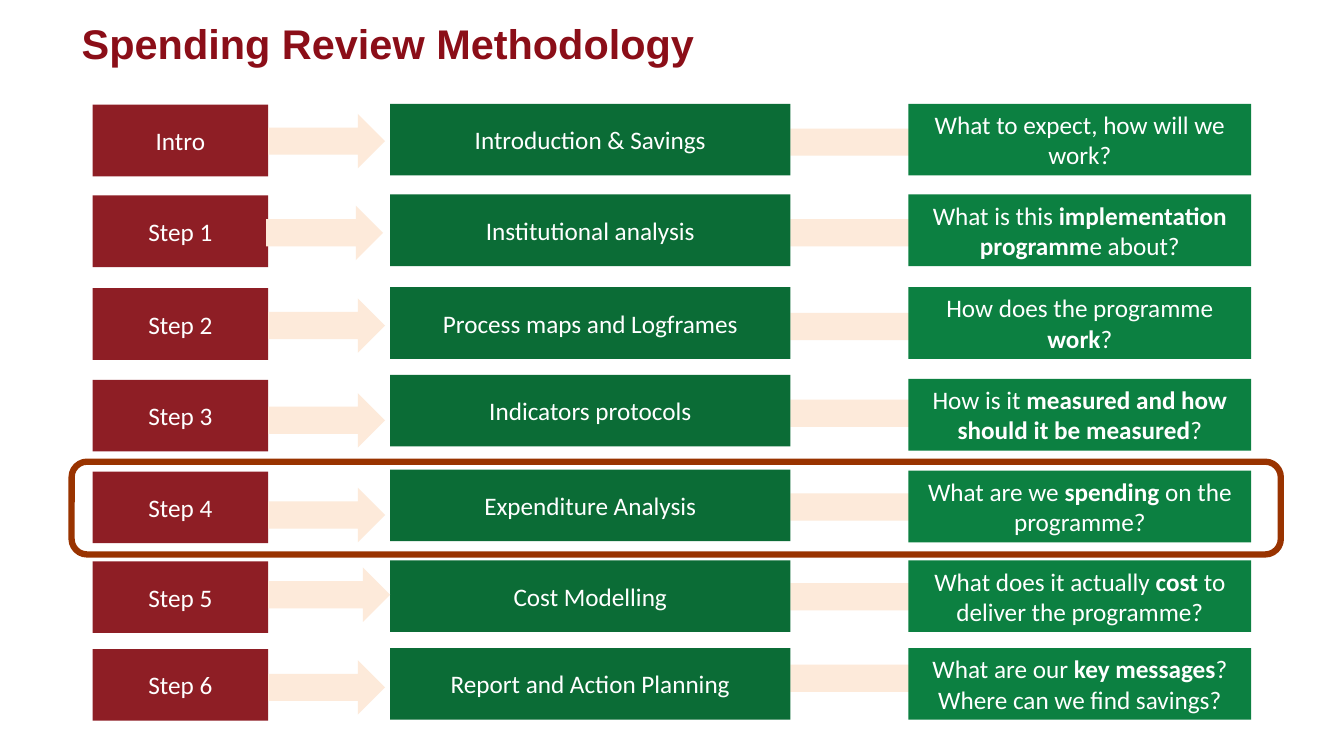
from dataclasses import dataclass

from pptx import Presentation
from pptx.dml.color import RGBColor
from pptx.enum.shapes import MSO_SHAPE as Shape
from pptx.enum.text import MSO_ANCHOR as Anchor, MSO_AUTO_SIZE as AutoSize, PP_ALIGN as Align
from pptx.util import Inches, Pt

SLIDE_WIDTH, SLIDE_HEIGHT = Inches(13.33), Inches(7.5)
COLUMN, ROW = SLIDE_WIDTH / 100, SLIDE_HEIGHT / 100


@dataclass(frozen=True)
class Theme:
    title: str = "8B0E18"
    step: str = "8E1E25"
    topic: str = "0B6C36"
    question: str = "0C8041"
    arrow: str = "FDEADA"
    highlight: str = "993300"
    text: str = "FFFFFF"
    title_font: str = "Arial"
    body_font: str = "Calibri"
    title_size: float = 29.6
    body_size: float = 18
    highlight_width: float = 4.5


@dataclass(frozen=True)
class Box:
    left: float
    top: float
    width: float
    height: float

    def inner(self, left, top, width, height):
        return Box(self.left + left, self.top + top, width, height)

    def lengths(self):
        return (round(self.left * COLUMN), round(self.top * ROW),
                round(self.width * COLUMN), round(self.height * ROW))


@dataclass(frozen=True)
class Stage:
    top: float
    name: str
    topic: str
    question: str
    arrow_drop: float
    link_drop: float
    topic_drop: float = 0
    arrow_shift: float = 0
    arrow_width: float = 8.7
    highlighted: bool = False


THEME = Theme()
STAGE_LEFT, STAGE_WIDTH, STAGE_HEIGHT = 6.9, 86.2, 9.47
STEP_WIDTH, STEP_DROP = 13.05, 0.13
TOPIC_LEFT, TOPIC_WIDTH = 22.13, 29.78
QUESTION_LEFT, QUESTION_WIDTH = 60.69, 25.51
LINK_WIDTH, ARROW_HEIGHT = 11.7, 7.2
MARGIN_X, MARGIN_Y = 1.57, 1.2

STAGES = (
    Stage(13.73, "Intro", "Introduction & Savings",
          "What to expect, how will we work?", 1.34, 1.47),
    Stage(25.73, "Step 1", "Institutional analysis",
          "What is this *implementation programm*e about?", 1.47, 1.47,
          arrow_shift=-0.15),
    Stage(38, "Step 2", "Process maps and Logframes",
          "How does the programme *work*?", 1.47, 1.6),
    Stage(50.13, "Step 3", "Indicators protocols",
          "How is it *measured and how should it be measured*?", 1.87, 0.94,
          topic_drop=-0.53),
    Stage(62.27, "Step 4", "Expenditure Analysis",
          "What are we *spending *on the programme?", 2.26, 1.2,
          topic_drop=-0.14, highlighted=True),
    Stage(74.13, "Step 5", "Cost Modelling",
          "What does it actually *cost* to deliver the programme?", 0.94, 1.2,
          arrow_width=9.08),
    Stage(85.73, "Step 6", "Report and Action Planning",
          "What are our *key messages*? Where can we find savings?", 1.6, 0.4),
)


def write_text(frame, text, *, font, size, color, bold=False, align=Align.LEFT):
    frame.word_wrap = True
    frame.auto_size = AutoSize.NONE
    frame.vertical_anchor = Anchor.MIDDLE
    para = frame.paragraphs[0]
    para.alignment = align
    for index, part in enumerate(text.split("*")):
        span = para.add_run()
        span.text = part
        span.font.name = font
        span.font.size = Pt(size)
        span.font.bold = bold or index % 2 == 1
        span.font.color.rgb = RGBColor.from_string(color)


def add_block(page, kind, box, fill):
    block = page.shapes.add_shape(kind, *box.lengths())
    block.shadow.inherit = False
    block.fill.solid()
    block.fill.fore_color.rgb = RGBColor.from_string(fill)
    block.line.fill.background()
    return block


def add_label(page, box, text, fill):
    label = add_block(page, Shape.RECTANGLE, box, fill)
    write_text(label.text_frame, text, font=THEME.body_font, size=THEME.body_size,
               color=THEME.text, align=Align.CENTER)


def add_title(page, box, text):
    title = page.shapes.title
    title.left, title.top, title.width, title.height = box.lengths()
    write_text(title.text_frame, text, font=THEME.title_font, size=THEME.title_size,
               color=THEME.title, bold=True)


def add_stage(page, box, stage):
    arrow = box.inner(STEP_WIDTH + stage.arrow_shift, stage.arrow_drop,
                      stage.arrow_width, ARROW_HEIGHT)
    link = box.inner(TOPIC_LEFT + TOPIC_WIDTH, stage.link_drop, LINK_WIDTH, ARROW_HEIGHT)
    labels = (
        (0, STEP_DROP, STEP_WIDTH, stage.name, THEME.step),
        (TOPIC_LEFT, stage.topic_drop, TOPIC_WIDTH, stage.topic, THEME.topic),
        (QUESTION_LEFT, 0, QUESTION_WIDTH, stage.question, THEME.question),
    )
    add_block(page, Shape.RIGHT_ARROW, link, THEME.arrow)
    for left, top, width, text, fill in labels:
        add_label(page, box.inner(left, top, width, box.height), text, fill)
    add_block(page, Shape.RIGHT_ARROW, arrow, THEME.arrow)


def add_highlight(page, box):
    frame = box.inner(-MARGIN_X, -MARGIN_Y, box.width + 2.4 * MARGIN_X,
                      box.height + 2.33 * MARGIN_Y)
    outline = page.shapes.add_shape(Shape.ROUNDED_RECTANGLE, *frame.lengths())
    outline.shadow.inherit = False
    outline.fill.background()
    outline.line.color.rgb = RGBColor.from_string(THEME.highlight)
    outline.line.width = Pt(THEME.highlight_width)


def add_methodology(deck):
    page = deck.slides.add_slide(deck.slide_layouts[5])
    add_title(page, Box(5.33, 2.67, 86.35, 6), "Spending Review Methodology")
    for stage in STAGES:
        box = Box(STAGE_LEFT, stage.top, STAGE_WIDTH, STAGE_HEIGHT)
        add_stage(page, box, stage)
        if stage.highlighted:
            add_highlight(page, box)


def main():
    deck = Presentation()
    deck.slide_width, deck.slide_height = SLIDE_WIDTH, SLIDE_HEIGHT
    add_methodology(deck)
    deck.save("out.pptx")


if __name__ == "__main__":
    main()
